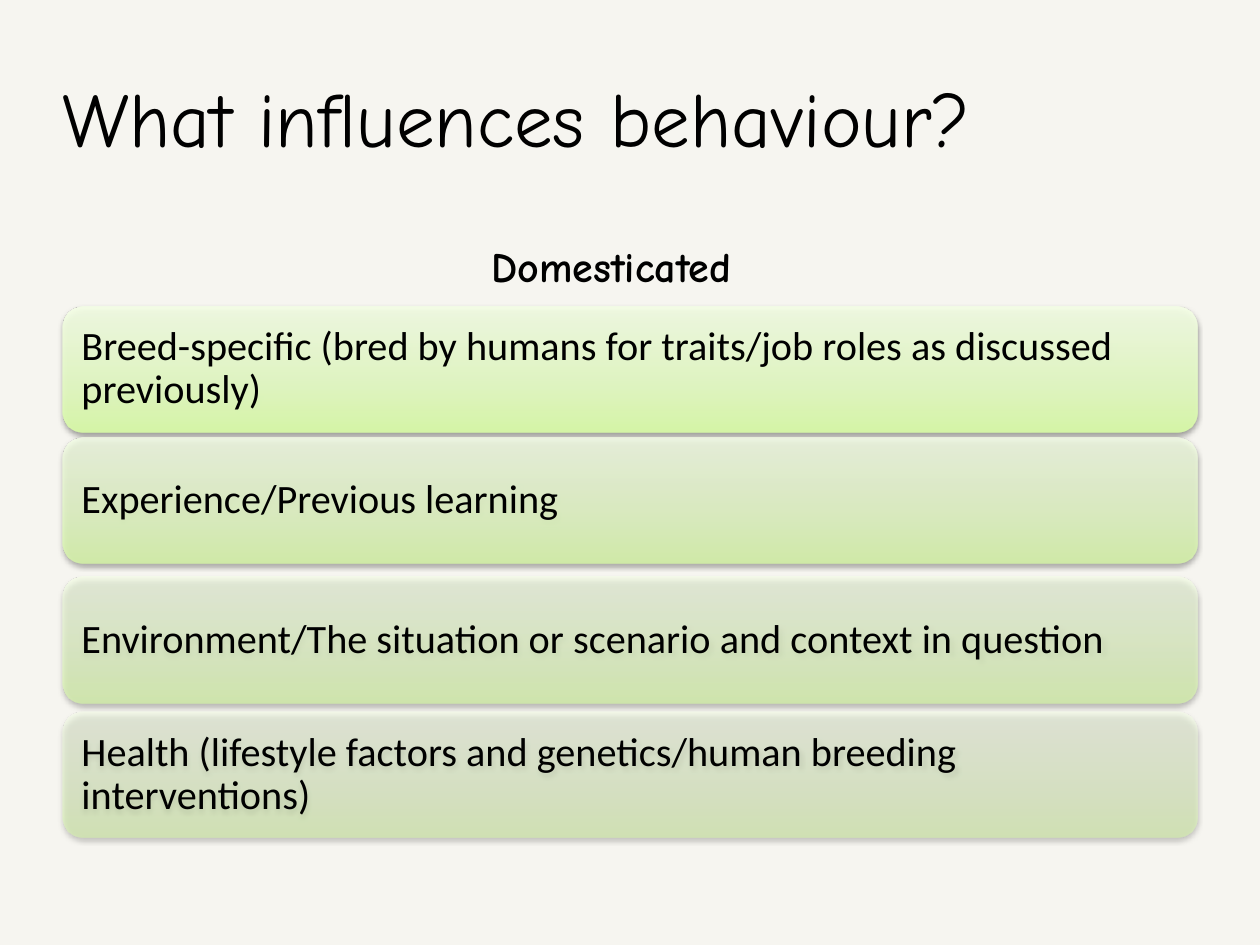
from lxml import etree
from pptx import Presentation
from pptx.dml.color import RGBColor
from pptx.enum.shapes import MSO_SHAPE as Shape
from pptx.enum.text import MSO_ANCHOR as Anchor, PP_ALIGN as Align
from pptx.oxml import parse_xml
from pptx.oxml.ns import nsdecls
from pptx.util import Inches, Pt

SLIDE_WIDTH, SLIDE_HEIGHT = 10, 7.5
MARGIN = 0.05 * SLIDE_WIDTH
CONTENT_WIDTH = SLIDE_WIDTH - 2 * MARGIN
CARD_HEIGHT = 1

CREAM = RGBColor(0xF6, 0xF5, 0xF0)
BLACK = RGBColor(0, 0, 0)
LIME = RGBColor(0xDA, 0xFD, 0xA7)
PALE_LIME = RGBColor(0xE4, 0xFC, 0xC2)
MIST = RGBColor(0xF5, 0xFF, 0xE7)
GRADIENT = ((0, LIME), (35, PALE_LIME), (100, MIST))

HEADING_FONT, BODY_FONT = "Comic Neue", "Calibri"

# Top edge in inches, wording
CARDS = (
    (2.43, "Breed-specific (bred by humans for traits/job roles as discussed previously)"),
    (3.47, "Experience/Previous learning"),
    (4.58, "Environment/The situation or scenario and context in question"),
    (5.65, "Health (lifestyle factors and genetics/human breeding interventions)"),
)
FIRST_OPACITY, LAST_OPACITY = 90, 50


def write(frame, text, font_name, size, anchor, bold=False):
    frame.word_wrap = True
    frame.vertical_anchor = anchor
    paragraph = frame.paragraphs[0]
    paragraph.alignment = Align.LEFT
    run = paragraph.add_run()
    run.text = text
    run.font.name = font_name
    run.font.size = Pt(size)
    run.font.bold = bold
    run.font.color.rgb = BLACK
    return paragraph


def add_heading(slide, box, text, size, anchor, bold=False):
    shape = slide.shapes.add_textbox(*(Inches(length) for length in box))
    frame = shape.text_frame
    frame.margin_left = frame.margin_right = 0
    frame.margin_top = frame.margin_bottom = 0
    write(frame, text, HEADING_FONT, size, anchor, bold)


def style_card(shape, opacity):
    """Give the card a translucent upward gradient and a soft shadow below."""
    shape.line.fill.background()
    stops = "".join(
        f'<a:gs pos="{position * 1000}"><a:srgbClr val="{color}">'
        f'<a:alpha val="{opacity * 1000}"/></a:srgbClr></a:gs>'
        for position, color in GRADIENT
    )
    gradient = parse_xml(
        f'<a:gradFill {nsdecls("a")} rotWithShape="1"><a:gsLst>{stops}</a:gsLst>'
        '<a:lin ang="16200000" scaled="0"/></a:gradFill>'
    )
    properties = shape._element.spPr
    properties.find("{*}ln").addprevious(gradient)

    shape.shadow.inherit = False
    effects = properties.find("{*}effectLst")
    shadow = etree.SubElement(
        effects, effects.tag.replace("effectLst", "outerShdw"),
        blurRad=str(Pt(3.1)), dist=str(Pt(1.6)), dir="5400000", rotWithShape="0",
    )
    shadow.append(parse_xml(
        f'<a:srgbClr {nsdecls("a")} val="{BLACK}"><a:alpha val="38000"/></a:srgbClr>'
    ))


def add_card(slide, top, text, opacity):
    shape = slide.shapes.add_shape(
        Shape.ROUNDED_RECTANGLE, Inches(MARGIN), Inches(top),
        Inches(CONTENT_WIDTH), Inches(CARD_HEIGHT),
    )
    style_card(shape, opacity)
    paragraph = write(shape.text_frame, text, BODY_FONT, 23, Anchor.MIDDLE)
    paragraph.line_spacing = 0.9


def main():
    presentation = Presentation()
    presentation.slide_width = Inches(SLIDE_WIDTH)
    presentation.slide_height = Inches(SLIDE_HEIGHT)
    slide = presentation.slides.add_slide(presentation.slide_layouts[6])
    slide.background.fill.solid()
    slide.background.fill.fore_color.rgb = CREAM

    add_heading(slide, (MARGIN, 0.04 * SLIDE_HEIGHT, CONTENT_WIDTH, 1.25),
                "What influences behaviour?", 44, Anchor.MIDDLE)
    add_heading(slide, (0.39 * SLIDE_WIDTH, 1.61, 0.22 * SLIDE_WIDTH, 0.7),
                "Domesticated", 24, Anchor.BOTTOM, bold=True)

    opacity_step = (LAST_OPACITY - FIRST_OPACITY) / (len(CARDS) - 1)
    for index, (top, text) in enumerate(CARDS):
        add_card(slide, top, text, round(FIRST_OPACITY + index * opacity_step))

    presentation.save("out.pptx")


if __name__ == "__main__":
    main()
